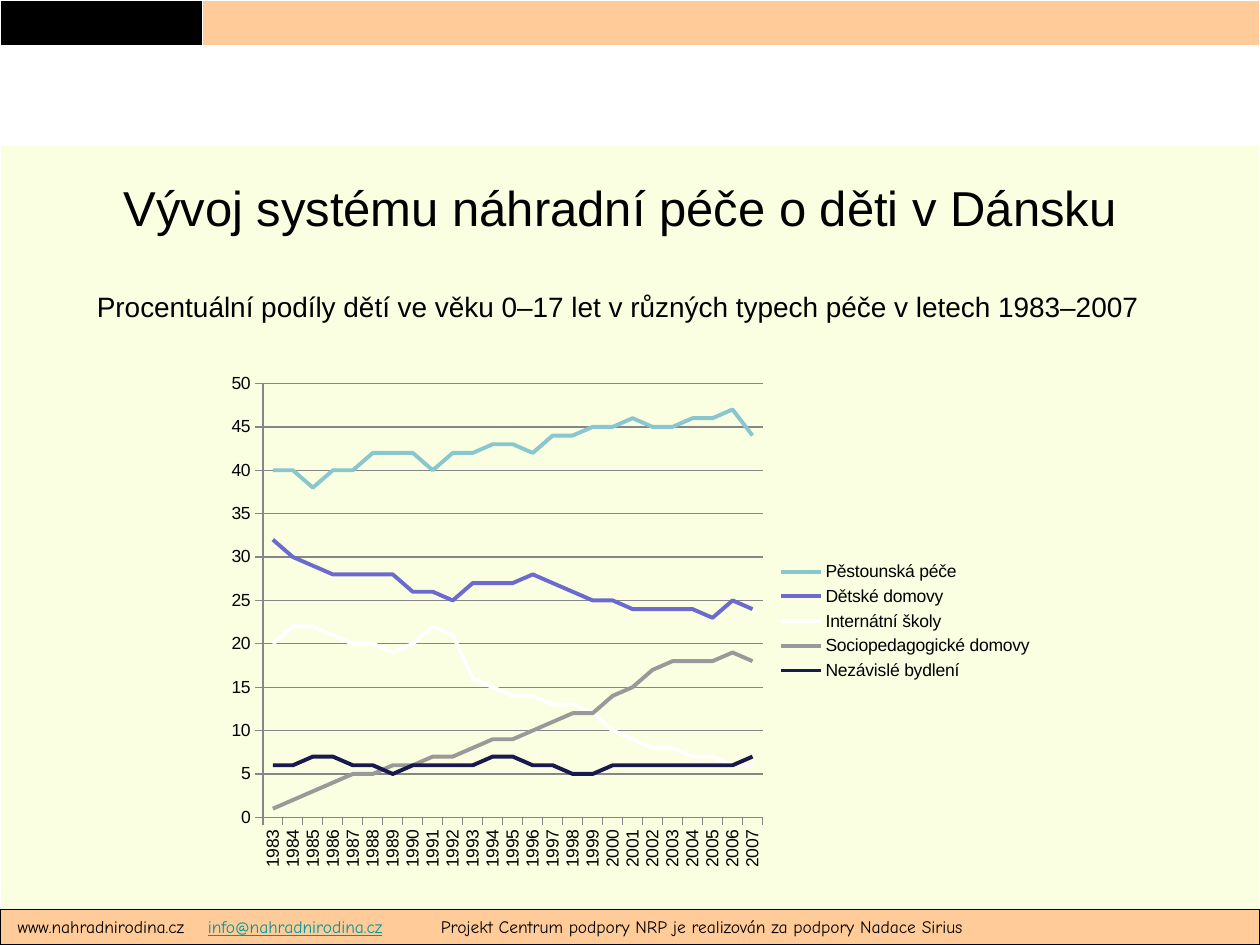
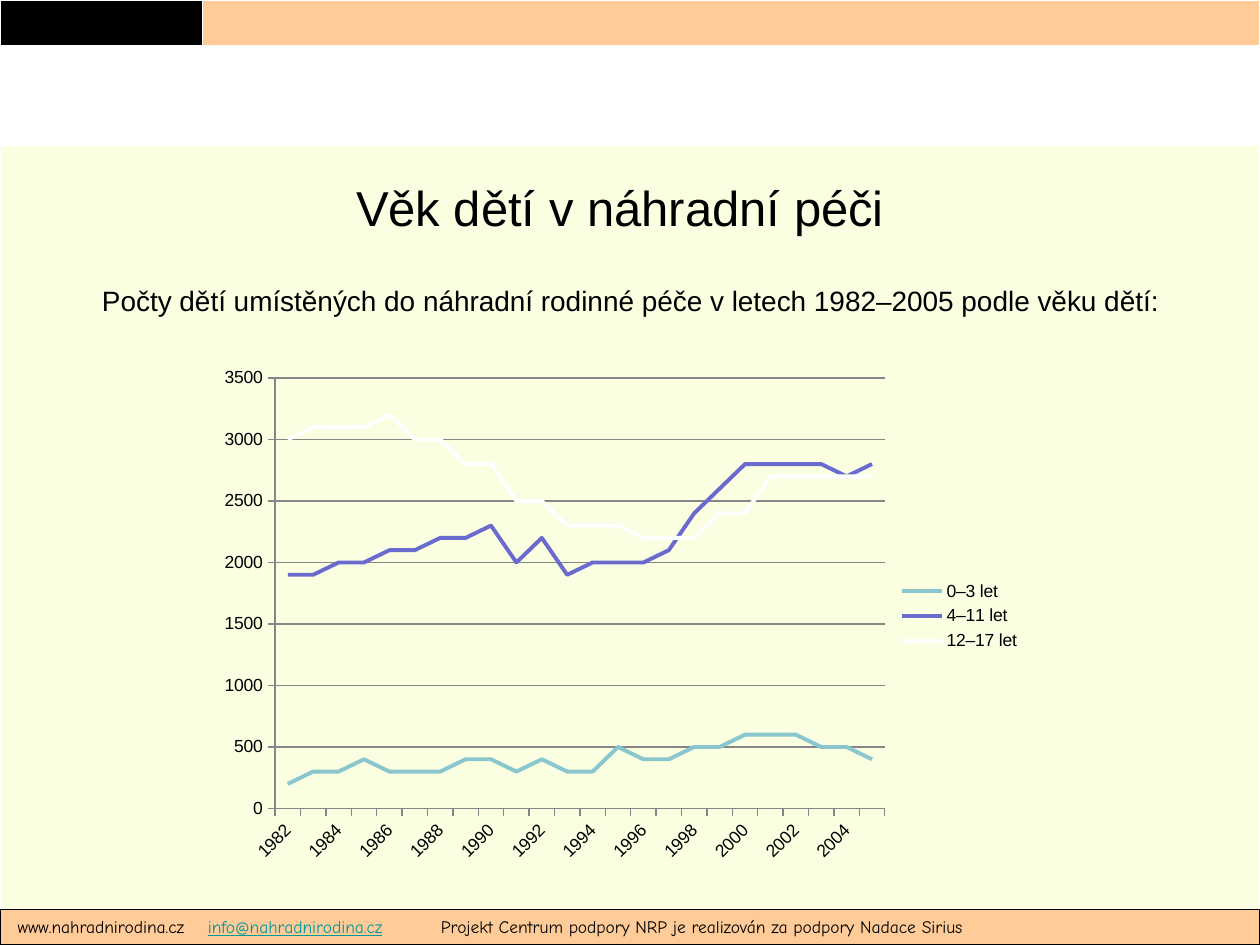
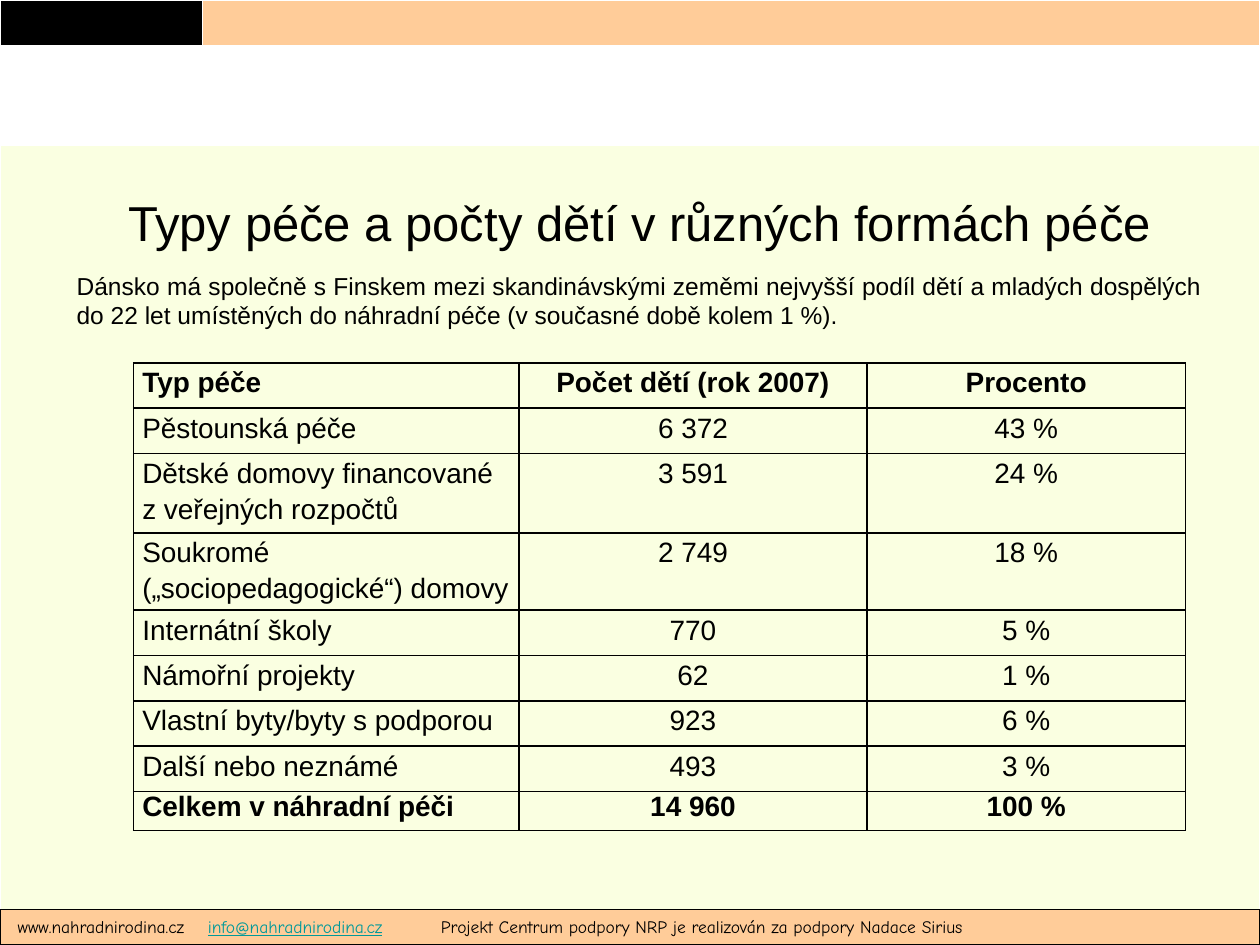
from dataclasses import dataclass

from lxml import etree
from pptx import Presentation
from pptx.chart.data import CategoryChartData
from pptx.dml.color import RGBColor
from pptx.enum.chart import XL_CHART_TYPE, XL_LEGEND_POSITION, XL_TICK_MARK
from pptx.enum.shapes import MSO_SHAPE
from pptx.enum.text import MSO_ANCHOR, MSO_AUTO_SIZE, PP_ALIGN
from pptx.oxml.ns import qn
from pptx.util import Inches, Pt

LINE_CHART = XL_CHART_TYPE.LINE
LEGEND_RIGHT = XL_LEGEND_POSITION.RIGHT
TICK_OUTSIDE, TICK_NONE = XL_TICK_MARK.OUTSIDE, XL_TICK_MARK.NONE
RECTANGLE = MSO_SHAPE.RECTANGLE
MIDDLE, NO_AUTOFIT = MSO_ANCHOR.MIDDLE, MSO_AUTO_SIZE.NONE
LEFT, CENTER, JUSTIFY = PP_ALIGN.LEFT, PP_ALIGN.CENTER, PP_ALIGN.JUSTIFY


@dataclass(frozen=True)
class Theme:
    font: str = "Arial"
    footer_font: str = "Comic Neue"
    black: RGBColor = RGBColor(0x00, 0x00, 0x00)
    white: RGBColor = RGBColor(0xFF, 0xFF, 0xFF)
    cream: RGBColor = RGBColor(0xFA, 0xFF, 0xE1)
    peach: RGBColor = RGBColor(0xFF, 0xCC, 0x99)
    teal: RGBColor = RGBColor(0x00, 0x99, 0x99)
    axis: RGBColor = RGBColor(0x86, 0x86, 0x86)
    series: tuple = ("8AC6CD", "6B6BCF", "FFFFFF", "999999", "19194D")
    title_size: int = 28
    body_size: int = 16
    note_size: int = 14
    small_size: int = 10


theme = Theme()


def add_text(slide, box, text, size, alignment=LEFT, font_name=theme.font):
    shape = slide.shapes.add_textbox(*map(Inches, box))
    shape.text_frame.word_wrap = True
    paragraph = shape.text_frame.paragraphs[0]
    paragraph.text = text
    paragraph.alignment = alignment
    paragraph.font.name = font_name
    paragraph.font.size = Pt(size)
    paragraph.font.color.rgb = theme.black
    return shape


def add_line_chart(slide, box, categories, series, maximum, step, plot, rotation, label_skip):
    data = CategoryChartData(number_format="General")
    data.categories = categories
    for name, values in series.items():
        data.add_series(name, values)
    chart = slide.shapes.add_chart(LINE_CHART, *map(Inches, box), data).chart
    chart.has_title = False
    chart.font.name = theme.font
    chart.font.size = Pt(theme.small_size)
    chart.font.color.rgb = theme.black
    chart.has_legend = True
    chart.legend.position = LEGEND_RIGHT
    chart.legend.include_in_layout = False
    chart.plots[0].vary_by_categories = False

    # Series lines
    for line, color in zip(chart.plots[0].series, theme.series):
        line.smooth = False
        line.format.line.width = Pt(2.25)
        line.format.line.color.rgb = RGBColor.from_string(color)

    # Axes and gridlines
    value_axis, category_axis = chart.value_axis, chart.category_axis
    value_axis.minimum_scale, value_axis.maximum_scale = 0, maximum
    value_axis.major_unit = step
    value_axis.has_major_gridlines = True
    for axis in (value_axis, category_axis):
        axis.major_tick_mark, axis.minor_tick_mark = TICK_OUTSIDE, TICK_NONE
        axis.tick_labels.font.size = Pt(theme.small_size)
    for part in (value_axis, category_axis, value_axis.major_gridlines):
        part.format.line.color.rgb = theme.axis
        part.format.line.width = Pt(0.75)

    # Label rotation, label interval and plot area
    category_xml = chart.element.xpath(".//c:catAx")[0]
    category_xml.xpath("./c:txPr/a:bodyPr")[0].set("rot", str(rotation * 60000))
    skip = etree.Element(qn("c:tickLblSkip"), val=str(label_skip))
    category_xml.find(qn("c:noMultiLvlLbl")).addprevious(skip)
    plot_area = chart.element.xpath(".//c:plotArea")[0]
    for old_layout in plot_area.findall(qn("c:layout")):
        plot_area.remove(old_layout)
    layout = etree.Element(qn("c:layout"))
    plot_area.insert(0, layout)
    manual = etree.SubElement(layout, qn("c:manualLayout"))
    settings = [("layoutTarget", "inner"), ("xMode", "edge"), ("yMode", "edge")]
    for tag, value in settings + list(zip("xywh", plot)):
        etree.SubElement(manual, qn("c:" + tag), val=str(value))


presentation = Presentation()
presentation.slide_width, presentation.slide_height = Inches(10), Inches(7.5)
title_only = presentation.slide_layouts[5]
for placeholder in list(title_only.placeholders)[1:]:
    placeholder.element.getparent().remove(placeholder.element)

titles = [
    ("Vývoj systému náhradní péče o děti v Dánsku", (0.67, 0.92, 8.5, 1.45)),
    ("Věk dětí v náhradní péči", (0.67, 0.92, 8.5, 1.45)),
    ("Typy péče a počty dětí v různých formách péče", (0.35, 1.04, 9.45, 1.45)),
]
slides = [presentation.slides.add_slide(title_only) for title in titles]
trend_slide, age_slide, types_slide = slides

# Shared bands, moved to the layout behind its title
footer_box = (0, 7.22, 10, 0.28)
bands = [
    ((0, 1.15, 10, 6.35), theme.cream, theme.white),
    ((1.53, 0, 8.47, 0.36), theme.peach, theme.white),
    ((0, 0, 1.61, 0.36), theme.black, theme.white),
    (footer_box, theme.peach, theme.black),
]
band_shapes = []
for box, fill, outline in bands:
    band = trend_slide.shapes.add_shape(RECTANGLE, *map(Inches, box))
    band.shadow.inherit = False
    band.fill.solid()
    band.fill.fore_color.rgb = fill
    band.line.color.rgb = outline
    band.line.width = Pt(0.75)
    band_shapes.append(band)
for position, band in enumerate(band_shapes, start=2):
    title_only.shapes.element.insert(position, band.element)

# Titles and footers
for slide, (text, box) in zip(slides, titles):
    title = slide.shapes.title
    title.left, title.top, title.width, title.height = map(Inches, box)
    title.text_frame.auto_size = NO_AUTOFIT
    title.text_frame.vertical_anchor = MIDDLE
    title.text = text
    paragraph = title.text_frame.paragraphs[0]
    paragraph.alignment = CENTER
    paragraph.font.name = theme.font
    paragraph.font.size = Pt(theme.title_size)
    paragraph.font.color.rgb = theme.black

    footer = add_text(slide, footer_box, "www.nahradnirodina.cz\t", theme.small_size,
                      font_name=theme.footer_font)
    footer.text_frame.margin_left = Inches(0.14)
    paragraph = footer.text_frame.paragraphs[0]
    email = paragraph.add_run()
    email.text = "info@nahradnirodina.cz"
    email.font.color.rgb = theme.teal
    email.font.underline = True
    paragraph.add_run().text = "\tProjekt Centrum podpory NRP je realizován za podpory Nadace Sirius"
    tabs = etree.Element(qn("a:tabLst"))
    for stop in (1.51, 3.36):
        etree.SubElement(tabs, qn("a:tab"), pos=str(Inches(stop)), algn="l")
    paragraph.font.element.addprevious(tabs) if hasattr(paragraph.font, "element") else \
        paragraph._p.pPr.insert(0, tabs)

# Slide 1: shares of children by type of care
add_text(trend_slide, (0.67, 2.25, 8.58, 0.37),
         "Procentuální podíly dětí ve věku 0–17 let v různých typech péče v letech 1983–2007",
         theme.body_size)
care_shares = {
    "Pěstounská péče": (40, 40, 38, 40, 40, 42, 42, 42, 40, 42, 42, 43, 43, 42, 44, 44, 45, 45,
                        46, 45, 45, 46, 46, 47, 44),
    "Dětské domovy": (32, 30, 29, 28, 28, 28, 28, 26, 26, 25, 27, 27, 27, 28, 27, 26, 25, 25,
                      24, 24, 24, 24, 23, 25, 24),
    "Internátní školy": (20, 22, 22, 21, 20, 20, 19, 20, 22, 21, 16, 15, 14, 14, 13, 13, 12, 10,
                         9, 8, 8, 7, 7, 6, 6),
    "Sociopedagogické domovy": (1, 2, 3, 4, 5, 5, 6, 6, 7, 7, 8, 9, 9, 10, 11, 12, 12, 14,
                                15, 17, 18, 18, 18, 19, 18),
    "Nezávislé bydlení": (6, 6, 7, 7, 6, 6, 5, 6, 6, 6, 6, 7, 7, 6, 6, 5, 5, 6,
                          6, 6, 6, 6, 6, 6, 7),
}
add_line_chart(trend_slide, (1.69, 2.88, 6.61, 4.1), [str(year) for year in range(1983, 2008)],
               care_shares, maximum=50, step=5, plot=(0.06, 0.04, 0.6, 0.84),
               rotation=-90, label_skip=1)

# Slide 2: numbers of children by age
add_text(age_slide, (0.16, 2.2, 9.69, 0.37),
         "Počty dětí umístěných do náhradní rodinné péče v letech 1982–2005 podle věku dětí:",
         theme.body_size, CENTER)
age_counts = {
    "0–3 let": (200, 300, 300, 400, 300, 300, 300, 400, 400, 300, 400, 300,
                300, 500, 400, 400, 500, 500, 600, 600, 600, 500, 500, 400),
    "4–11 let": (1900, 1900, 2000, 2000, 2100, 2100, 2200, 2200, 2300, 2000, 2200, 1900,
                 2000, 2000, 2000, 2100, 2400, 2600, 2800, 2800, 2800, 2800, 2700, 2800),
    "12–17 let": (3000, 3100, 3100, 3100, 3200, 3000, 3000, 2800, 2800, 2500, 2500, 2300,
                  2300, 2300, 2200, 2200, 2200, 2400, 2400, 2700, 2700, 2700, 2700, 2700),
}
add_line_chart(age_slide, (1.66, 2.88, 6.54, 4.02), [str(year) for year in range(1982, 2006)],
               age_counts, maximum=3500, step=500, plot=(0.08, 0.03, 0.74, 0.85),
               rotation=-45, label_skip=2)

# Slide 3: table of care types
care_rows = [
    ("Typ péče", "Počet dětí (rok 2007)", "Procento"),
    ("Pěstounská péče", "6 372", "43 %"),
    ("Dětské domovy financované z veřejných rozpočtů", "3 591", "24 %"),
    ("Soukromé („sociopedagogické“) domovy", "2 749", "18 %"),
    ("Internátní školy", "770", "5 %"),
    ("Námořní projekty", "62", "1 %"),
    ("Vlastní byty/byty s podporou", "923", "6 %"),
    ("Další nebo neznámé", "493", "3 %"),
    ("Celkem v náhradní péči", "14 960", "100 %"),
]
column_widths = (3.06, 2.76, 2.53)
row_heights = (0.36, 0.36, 0.63, 0.6, 0.36, 0.36, 0.36, 0.36, 0.31)
table = types_slide.shapes.add_table(len(care_rows), len(column_widths),
                                     *map(Inches, (1.06, 2.88, 8.35, 4.02))).table
table.first_row = table.horz_banding = False
for column, width in zip(table.columns, column_widths):
    column.width = Inches(width)
last_row = len(care_rows) - 1
for row_index, (texts, height) in enumerate(zip(care_rows, row_heights)):
    table.rows[row_index].height = Inches(height)
    for column_index, text in enumerate(texts):
        cell = table.cell(row_index, column_index)
        cell.margin_left = cell.margin_right = Inches(0.07)
        cell.margin_top = cell.margin_bottom = 0
        cell.text = text
        paragraph = cell.text_frame.paragraphs[0]
        paragraph.alignment = CENTER if column_index else LEFT
        paragraph.line_spacing = 1.0 if row_index == last_row else 1.15
        paragraph.font.name = theme.font
        paragraph.font.size = Pt(theme.body_size)
        paragraph.font.bold = row_index in (0, last_row)
        paragraph.font.color.rgb = theme.black
        cell_properties = cell._tc.get_or_add_tcPr()
        for side in ("lnL", "lnR", "lnT", "lnB"):
            border = etree.SubElement(cell_properties, qn("a:" + side), w=str(Pt(1)))
            border_fill = etree.SubElement(border, qn("a:solidFill"))
            etree.SubElement(border_fill, qn("a:srgbClr"), val=str(theme.black))
        cell.fill.background()

add_text(types_slide, (0.51, 2.1, 9.13, 0.57),
         "Dánsko má společně s Finskem mezi skandinávskými zeměmi nejvyšší podíl dětí a mladých "
         "dospělých do 22 let umístěných do náhradní péče (v současné době kolem 1 %).",
         theme.note_size, JUSTIFY)

presentation.save("out.pptx")
